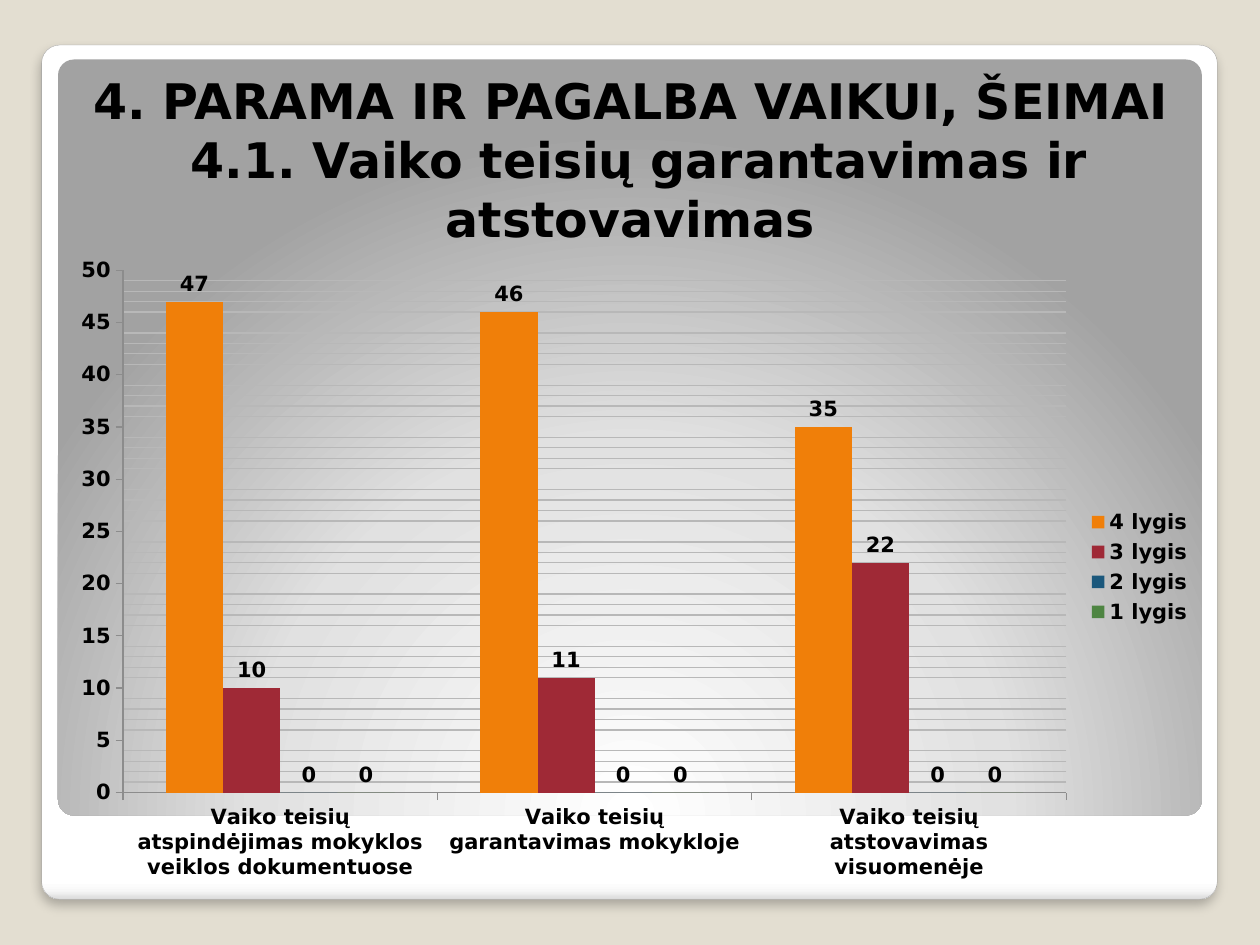
from lxml.etree import SubElement
from pptx import Presentation
from pptx.chart.data import CategoryChartData
from pptx.dml.color import RGBColor
from pptx.enum.chart import XL_CHART_TYPE as ChartType, XL_LABEL_POSITION as LabelPosition
from pptx.enum.chart import XL_LEGEND_POSITION as LegendPosition, XL_TICK_MARK as TickMark
from pptx.enum.shapes import MSO_SHAPE as Shape
from pptx.enum.text import MSO_ANCHOR as Anchor, PP_ALIGN as Align
from pptx.oxml import parse_xml
from pptx.oxml.ns import nsdecls, qn
from pptx.util import Cm, Pt

FONT = "DejaVu Sans"
BLACK = RGBColor(0x00, 0x00, 0x00)
BEIGE = RGBColor(0xE3, 0xDE, 0xD1)
FRAME_GREY = RGBColor(0xA4, 0xA4, 0xA4)
AXIS_GREY = RGBColor(0x8C, 0x8C, 0x8C)
GRID_GREY = RGBColor(0xB8, 0xB8, 0xB8)
ORANGE = RGBColor(0xF0, 0x7F, 0x09)
RED = RGBColor(0x9F, 0x29, 0x36)
BLUE = RGBColor(0x1B, 0x58, 0x7C)
GREEN = RGBColor(0x4E, 0x85, 0x42)

TITLE = ["4. PARAMA IR PAGALBA VAIKUI, ŠEIMAI",
         " 4.1. Vaiko teisių garantavimas ir atstovavimas"]
CATEGORIES = ["Vaiko teisių atspindėjimas mokyklos veiklos dokumentuose",
              "Vaiko teisių garantavimas mokykloje",
              "Vaiko teisių atstovavimas visuomenėje"]
SERIES = [("4 lygis", (47, 46, 35), ORANGE),
          ("3 lygis", (10, 11, 22), RED),
          ("2 lygis", (0, 0, 0), BLUE),
          ("1 lygis", (0, 0, 0), GREEN)]

FRAME_STOPS = [(0, "FFFFFF"), (98, "FFFFFF"), (99, "F7F7F7"), (100, "DADADA")]
PANEL_STOPS = [(0, "FFFFFF"), (55, "E1E1E1"), (100, "A2A2A2")]
DOWNWARD = '<a:lin ang="5400000" scaled="0"/>'
FROM_BELOW = ('<a:path path="circle"><a:fillToRect l="50000" t="175000" '
              'r="50000" b="-75000"/></a:path>')
SHADOW = (f'<a:effectLst {nsdecls("a")}><a:outerShdw blurRad="76200" dist="50800" '
          'dir="5400000" algn="tl" rotWithShape="0"><a:srgbClr val="000000">'
          '<a:alpha val="25000"/></a:srgbClr></a:outerShdw></a:effectLst>')
GRID_LINE = (f'<c:spPr {nsdecls("c", "a")}><a:ln w="9525"><a:solidFill>'
             f'<a:srgbClr val="{GRID_GREY}"/></a:solidFill></a:ln></c:spPr>')
PLOT_AREA = {"x": 0.06, "y": 0.04, "w": 0.82, "h": 0.81}


def add_rounded(page, place, stops, direction):
    """Add a rounded rectangle with a gradient fill and no line or shadow."""
    box = page.shapes.add_shape(Shape.ROUNDED_RECTANGLE, *map(Cm, place))
    box.adjustments[0] = 0.021
    box.shadow.inherit = False
    box.line.fill.background()
    colours = "".join(f'<a:gs pos="{position * 1000}"><a:srgbClr val="{colour}"/></a:gs>'
                      for position, colour in stops)
    box._element.spPr.find(qn("a:prstGeom")).addnext(parse_xml(
        f'<a:gradFill {nsdecls("a")} rotWithShape="1"><a:gsLst>{colours}</a:gsLst>'
        f'{direction}</a:gradFill>'))
    return box


def style_font(font, size, bold=True):
    font.name, font.size, font.bold = FONT, Pt(size), bold
    font.color.rgb = BLACK


def add_title(page):
    box = page.shapes.add_textbox(Cm(0.71), Cm(1.12), Cm(24), Cm(3.99))
    frame = box.text_frame
    frame.word_wrap = True
    frame.vertical_anchor = Anchor.BOTTOM
    para = frame.paragraphs[0]
    para.alignment = Align.CENTER
    for index, line in enumerate(TITLE):
        if index:
            para.add_line_break()
        span = para.add_run()
        span.text = line
        style_font(span.font, 28)


def style_axis(axis):
    style_font(axis.tick_labels.font, 12)
    axis.major_tick_mark = TickMark.OUTSIDE
    axis.minor_tick_mark = TickMark.NONE
    axis.format.line.color.rgb = AXIS_GREY


def fix_plot_area(chart):
    """Set the inner plot rectangle as fractions of the chart."""
    plot_area = chart._chartSpace.chart.plotArea
    for old in plot_area.findall(qn("c:layout")):
        plot_area.remove(old)
    layout = parse_xml(f'<c:layout {nsdecls("c")}/>')
    manual = SubElement(layout, qn("c:manualLayout"))
    settings = [("layoutTarget", "inner"), ("xMode", "edge"), ("yMode", "edge")]
    for name, value in settings + list(PLOT_AREA.items()):
        SubElement(manual, qn(f"c:{name}")).set("val", str(value))
    plot_area.insert(0, layout)


def add_level_chart(page):
    data = CategoryChartData()
    data.categories = CATEGORIES
    for name, values, _ in SERIES:
        data.add_series(name, values)
    chart = page.shapes.add_chart(ChartType.COLUMN_CLUSTERED, Cm(1.09), Cm(4.93),
                                  Cm(23.19), Cm(13), data).chart
    style_font(chart.font, 10, bold=False)
    chart.has_title = False
    chart.has_legend = True
    chart.legend.position = LegendPosition.RIGHT
    chart.legend.include_in_layout = False
    style_font(chart.legend.font, 12)

    style_axis(chart.category_axis)
    scale = chart.value_axis
    style_axis(scale)
    scale.minimum_scale, scale.maximum_scale, scale.major_unit = 0, 50, 5
    scale.minor_unit = 1
    scale.has_major_gridlines = False
    scale.has_minor_gridlines = True
    scale._element.find(qn("c:minorGridlines")).append(parse_xml(GRID_LINE))

    plot = chart.plots[0]
    plot.vary_by_categories = False
    plot.gap_width, plot.overlap = 150, 0
    for series, (_, _, colour) in zip(plot.series, SERIES):
        series.format.fill.solid()
        series.format.fill.fore_color.rgb = colour
        labels = series.data_labels
        labels.show_value = True
        labels.position = LabelPosition.OUTSIDE_END
        style_font(labels.font, 12)
    fix_plot_area(chart)


def main():
    deck = Presentation()
    deck.slide_width, deck.slide_height = Cm(25.4), Cm(19.05)
    page = deck.slides.add_slide(deck.slide_layouts[6])
    page.background.fill.solid()
    page.background.fill.fore_color.rgb = BEIGE

    frame = add_rounded(page, (0.84, 0.91, 23.7, 17.22), FRAME_STOPS, DOWNWARD)
    frame.line.color.rgb = FRAME_GREY
    frame.line.width = Pt(0.16)
    properties = frame._element.spPr
    properties.replace(properties.find(qn("a:effectLst")), parse_xml(SHADOW))
    add_rounded(page, (1.17, 1.2, 23.06, 15.24), PANEL_STOPS, FROM_BELOW)

    add_title(page)
    add_level_chart(page)
    deck.save("out.pptx")


if __name__ == "__main__":
    main()
